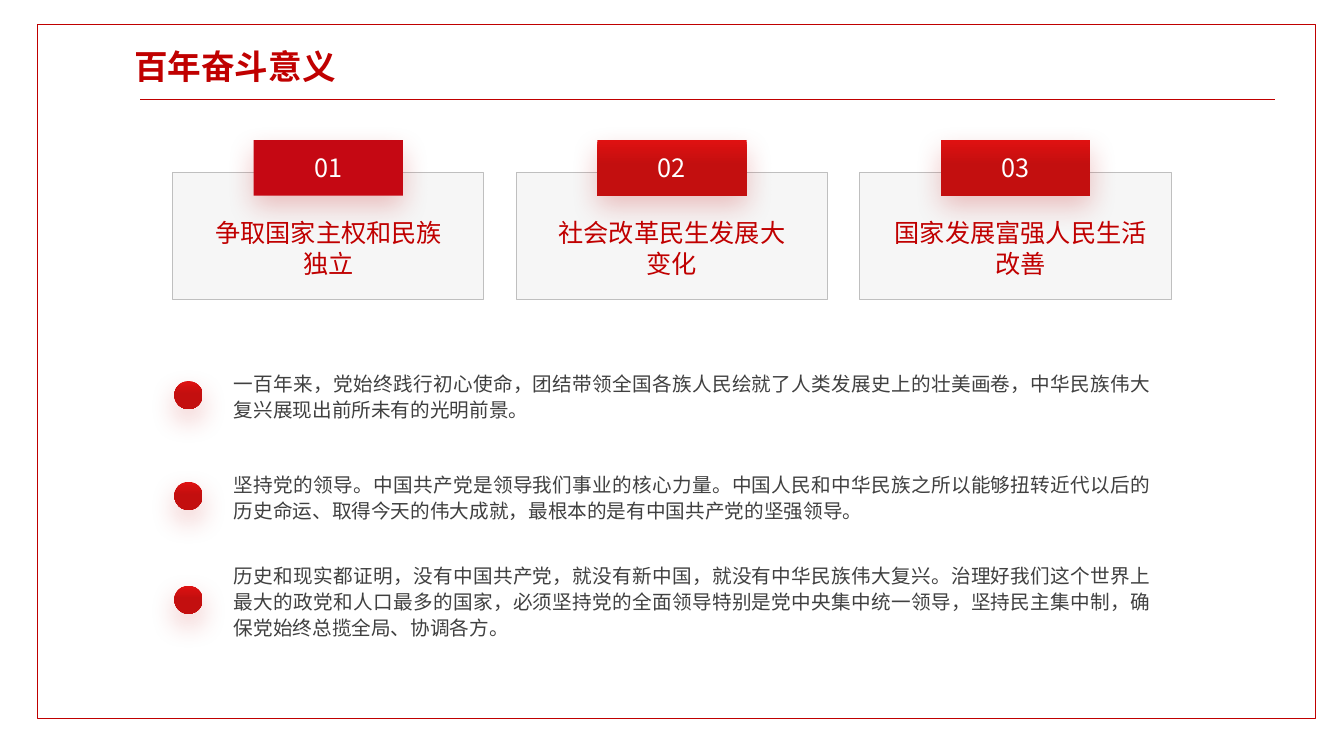
from lxml.etree import SubElement
from pptx import Presentation
from pptx.dml.color import RGBColor
from pptx.enum.shapes import MSO_CONNECTOR, MSO_SHAPE
from pptx.enum.text import MSO_ANCHOR, MSO_AUTO_SIZE, PP_ALIGN
from pptx.oxml.ns import qn
from pptx.util import Inches, Pt


def tint(text):
    return RGBColor.from_string(text)


class Deck:
    face = "Noto Sans CJK SC"
    red = "C00000"
    glow = "C30F0F"
    cols, rows = 40, 30

    def __init__(self):
        self.show = Presentation()
        self.show.slide_width = Inches(13.33)
        self.show.slide_height = Inches(7.5)
        self.slide = self.show.slides.add_slide(self.show.slide_layouts[1])
        self.shapes = self.slide.shapes

    def grid(self, *spots):
        width = self.show.slide_width / self.cols
        height = self.show.slide_height / self.rows
        return [round(n * (height if i % 2 else width)) for i, n in enumerate(spots)]

    def style(self, para, size, color, align, bold=False):
        para.alignment = align
        font = para.font
        font.name, font.size, font.bold = self.face, Pt(size), bold
        font.color.rgb = tint(color)
        node = para._p.pPr.find(qn("a:defRPr"))
        SubElement(node, qn("a:ea"), typeface=self.face)

    def shape(self, kind, spot, fill=None, line=None, width=1):
        item = self.shapes.add_shape(kind, *self.grid(*spot))
        item.shadow.inherit = False
        if fill:
            item.fill.solid()
            item.fill.fore_color.rgb = tint(fill)
        else:
            item.fill.gradient()
            item.fill.gradient_angle = 270
            stops = item.fill.gradient_stops
            for stop, place, color in zip(stops, (0, 0.45), ("DF1111", self.glow)):
                stop.position = place
                stop.color.rgb = tint(color)
        if line:
            item.line.color.rgb = tint(line)
            item.line.width = Pt(width)
        else:
            item.line.fill.background()
        return item

    def frame(self, *spot):
        item = self.shape(MSO_SHAPE.RECTANGLE, spot, "FFFFFF", self.red)
        self.shapes._spTree.insert(2, item._element)

    def rule(self, *spot):
        item = self.shapes.add_connector(MSO_CONNECTOR.STRAIGHT, *self.grid(*spot))
        item.line.color.rgb = tint(self.red)
        item.line.width = Pt(0.5)
        SubElement(item._element.spPr, qn("a:effectLst"))

    def panel(self, *spot):
        item = self.shape(MSO_SHAPE.RECTANGLE, spot, "D9D9D9", "BFBFBF", 0.5)
        color = item._element.spPr.find(qn("a:solidFill"))[0]
        SubElement(color, qn("a:alpha"), val="23000")

    def shade(self, item):
        effects = item._element.spPr.find(qn("a:effectLst"))
        drop = SubElement(effects, qn("a:outerShdw"), blurRad=str(Pt(20)),
                          dist=str(Pt(8)), dir="5400000", algn="t", rotWithShape="0")
        color = SubElement(drop, qn("a:srgbClr"), val=self.glow)
        SubElement(color, qn("a:alpha"), val="23000")

    def badge(self, text, fill, *spot):
        item = self.shape(MSO_SHAPE.ROUNDED_RECTANGLE, spot, fill)
        item.adjustments[0] = 0
        self.shade(item)
        box = item.text_frame
        box.margin_left = box.margin_right = box.margin_top = box.margin_bottom = 0
        box.vertical_anchor = MSO_ANCHOR.MIDDLE
        box.text = text
        self.style(box.paragraphs[0], 18, "FFFFFF", PP_ALIGN.CENTER)

    def dot(self, *spot):
        self.shade(self.shape(MSO_SHAPE.OVAL, spot))

    def label(self, text, *spot):
        box = self.shapes.add_textbox(*self.grid(*spot)).text_frame
        box.word_wrap = True
        box.auto_size = MSO_AUTO_SIZE.SHAPE_TO_FIT_TEXT
        box.text = text
        for para in box.paragraphs:
            self.style(para, 18, self.red, PP_ALIGN.CENTER)

    def place(self, item, text, *spot):
        item.left, item.top, item.width, item.height = self.grid(*spot)
        box = item.text_frame
        box.word_wrap = True
        box.auto_size = MSO_AUTO_SIZE.NONE
        box.vertical_anchor = MSO_ANCHOR.TOP
        box.text = text
        return box.paragraphs

    def title(self, text, *spot):
        para = self.place(self.shapes.title, text, *spot)[0]
        self.style(para, 24, self.red, PP_ALIGN.JUSTIFY, True)

    def points(self, texts, gaps, *spot):
        paras = self.place(self.slide.placeholders[1], "\n".join(texts), *spot)
        for para, gap in zip(paras, gaps):
            para.line_spacing = 1.1
            para.space_before = Pt(gap)
            props = para._p.get_or_add_pPr()
            props.set("marL", "0")
            props.set("indent", "0")
            SubElement(props, qn("a:buNone"))
            self.style(para, 14, "404040", PP_ALIGN.JUSTIFY)


CARDS = [
    ("争取国家主权和民族独立", "C50813", 0.93, 7.44),
    ("社会改革民生发展大\n变化", None, 0.45, 8.37),
    ("国家发展富强人民生活改善", None, 0.6, 8.37),
]
POINTS = [
    "一百年来，党始终践行初心使命，团结带领全国各族人民绘就了人类发展史上的壮美画卷，中华民族伟大复兴展现出前所未有的光明前景。",
    "坚持党的领导。中国共产党是领导我们事业的核心力量。中国人民和中华民族之所以能够扭转近代以后的历史命运、取得今天的伟大成就，最根本的是有中国共产党的坚强领导。",
    "历史和现实都证明，没有中国共产党，就没有新中国，就没有中华民族伟大复兴。治理好我们这个世界上最大的政党和人口最多的国家，必须坚持党的全面领导特别是党中央集中统一领导，坚持民主集中制，确保党始终总揽全局、协调各方。",
]


def main():
    deck = Deck()
    deck.frame(1.11, 0.96, 38.04, 27.56)
    deck.rule(4.17, 3.96, 37.95, 3.96)
    deck.title("百年奋斗意义", 3.69, 1.64, 7.56, 2)
    for i, (text, fill, shift, width) in enumerate(CARDS):
        left = 5.13 + 10.23 * i
        deck.panel(left, 6.84, 9.27, 5.04)
        deck.badge(f"{i + 1:02}", fill, left + 2.42, 5.56, 4.44, 2.2)
        deck.label(text, left + shift, 8.44, width, 2.84)
    for top in (15.12, 19.12, 23.24):
        deck.dot(5.19, top, 0.84, 1.12)
    deck.points(POINTS, (0, 35, 28), 6.66, 14.48, 27.9, 11)
    deck.show.save("out.pptx")


if __name__ == "__main__":
    main()
